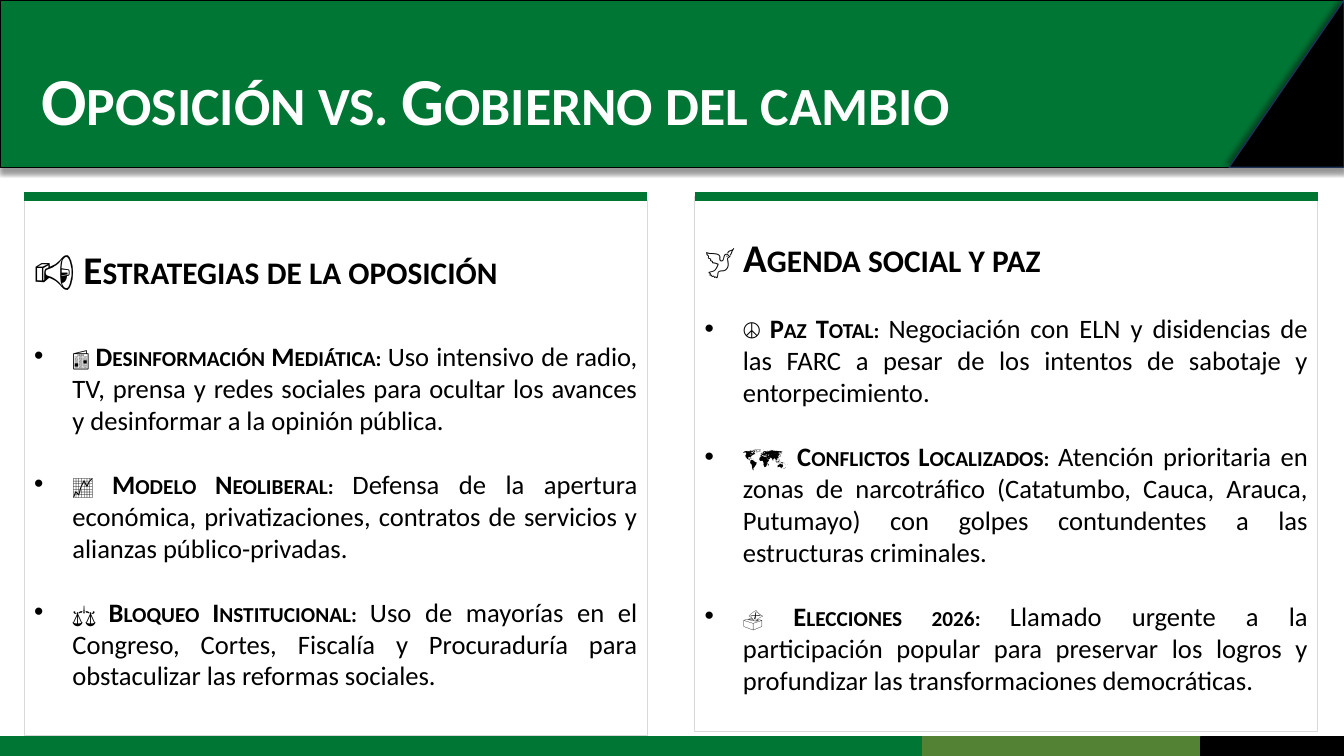
import pptx
import pptx.util
import pptx.dml.color
import pptx.enum.shapes
import pptx.enum.text
import pptx.oxml
import pptx.oxml.ns

Inches, Pt = pptx.util.Inches, pptx.util.Pt
ALIGN = pptx.enum.text.PP_ALIGN
MIDDLE = pptx.enum.text.MSO_ANCHOR.MIDDLE
RECT = pptx.enum.shapes.MSO_SHAPE.RECTANGLE
NS = pptx.oxml.ns.nsdecls("a")
GREEN, BLACK, WHITE = "007635", "000000", "FFFFFF"


def paint(shape, fill, line):
    shape.shadow.inherit = False
    if fill:
        shape.fill.solid()
        shape.fill.fore_color.rgb = pptx.dml.color.RGBColor.from_string(fill)
    else:
        shape.fill.background()
    shape.line.color.rgb = pptx.dml.color.RGBColor.from_string(line)
    shape.line.width = Pt(1)


def style(run, size, color, bold, small):
    run.font.name = "Calibri"
    run.font.size = Pt(size)
    run.font.bold = bold
    run.font.color.rgb = pptx.dml.color.RGBColor.from_string(color)
    if small:
        run.font._element.set("cap", "small")


deck = pptx.Presentation()
deck.slide_width, deck.slide_height = Inches(13.33), Inches(7.5)
slide = deck.slides.add_slide(deck.slide_layouts[5])
shapes = slide.shapes

# Header band with its dark corner
band = shapes.add_shape(RECT, 0, 0, Inches(13.33), Inches(1.66))
paint(band, GREEN, BLACK)
outline = shapes.build_freeform(Inches(13.33), 0)
outline.add_line_segments([(Inches(13.33), Inches(1.66)), (Inches(12.19), Inches(1.66))])
corner = outline.convert_to_shape()
paint(corner, BLACK, "1E3256")
for shape, angle in ((band, 90), (corner, 225)):
    effects = shape._element.spPr.find(pptx.oxml.ns.qn("a:effectLst"))
    effects.append(pptx.oxml.parse_xml(
        f'<a:outerShdw {NS} blurRad="{Pt(4)}" dist="{Pt(3)}" dir="{angle * 60000}" rotWithShape="0">'
        f'<a:srgbClr val="{BLACK}"><a:alpha val="40000"/></a:srgbClr></a:outerShdw>'))

# Footer strip
for left, width, color in ((0, 9.15, GREEN), (9.15, 2.76, "548235"), (11.91, 1.42, BLACK)):
    strip = shapes.add_shape(RECT, Inches(left), Inches(7.31), Inches(width), Inches(0.19))
    paint(strip, color, color)

# Title, brought in front of the band
title = shapes.title
shapes._spTree.append(title._element)
title.left, title.top = Inches(0.31), Inches(0.4)
title.width, title.height = Inches(12.1), Inches(1.26)
frame = title.text_frame
frame.text = "Oposición vs. Gobierno del cambio"
frame.vertical_anchor = MIDDLE
frame.auto_size = pptx.enum.text.MSO_AUTO_SIZE.NONE
frame.paragraphs[0].alignment = ALIGN.LEFT
frame.paragraphs[0].line_spacing = 0.9
style(frame.paragraphs[0].runs[0], 48, WHITE, True, True)

# Panels: left, top, gap below heading, heading runs, bullets
# Each heading run is (text, bold, small caps)
panels = [
    (0.24, 1.99, 34, [("📢 ", False, False), ("Estrategias de la oposición", True, True)], [
        ("📰", " Desinformación Mediática: ",
         "Uso intensivo de radio, TV, prensa y redes sociales para ocultar los avances "
         "y desinformar a la opinión pública."),
        ("📈", " Modelo Neoliberal: ",
         "Defensa de la apertura económica, privatizaciones, contratos de servicios "
         "y alianzas público-privadas."),
        ("⚖️", " Bloqueo Institucional: ",
         "Uso de mayorías en el Congreso, Cortes, Fiscalía y Procuraduría para "
         "obstaculizar las reformas sociales."),
    ]),
    (6.89, 1.95, 23, [("🕊️ Agenda social y paz", True, True)], [
        ("☮️ ", "Paz Total: ",
         "Negociación con ELN y disidencias de las FARC a pesar de los intentos de "
         "sabotaje y entorpecimiento."),
        ("🗺️", " Conflictos Localizados: ",
         "Atención prioritaria en zonas de narcotráfico (Catatumbo, Cauca, Arauca, "
         "Putumayo) con golpes contundentes a las estructuras criminales."),
        ("🗳️", " Elecciones 2026: ",
         "Llamado urgente a la participación popular para preservar los logros y "
         "profundizar las transformaciones democráticas."),
    ]),
]
for left, top, gap, heading, bullets in panels:
    panel = shapes.add_shape(RECT, Inches(left), Inches(top), Inches(6.18), Inches(5.31))
    paint(panel, None, "D9D9D9")
    frame = panel.text_frame
    frame.word_wrap = True
    frame.vertical_anchor = MIDDLE
    rows = [heading]
    for icon, label, body in bullets:
        rows.append([(icon, False, True), (label, True, True), (body, False, False)])
    for index, row in enumerate(rows):
        para = frame.add_paragraph() if index else frame.paragraphs[0]
        para.alignment = ALIGN.JUSTIFY
        if index:
            para.space_before = Pt(gap if index == 1 else 23)
            props = para._p.get_or_add_pPr()
            props.set("marL", str(Inches(0.38)))
            props.set("indent", str(-Inches(0.38)))
            props.append(pptx.oxml.parse_xml(f'<a:buFont {NS} typeface="Arial"/>'))
            props.append(pptx.oxml.parse_xml(f'<a:buChar {NS} char="•"/>'))
        for text, bold, small in row:
            run = para.add_run()
            run.text = text
            style(run, 19 if index else 28, BLACK, bold, small)

# Green rule above each panel
for left in (0.24, 6.89):
    rule = shapes.add_connector(pptx.enum.shapes.MSO_CONNECTOR.STRAIGHT,
                                Inches(left), Inches(1.95), Inches(left + 6.18), Inches(1.95))
    rule.line.color.rgb = pptx.dml.color.RGBColor.from_string(GREEN)
    rule.line.width = Pt(6)
    rule._element.spPr.append(pptx.oxml.parse_xml(f"<a:effectLst {NS}/>"))

deck.save("out.pptx")
